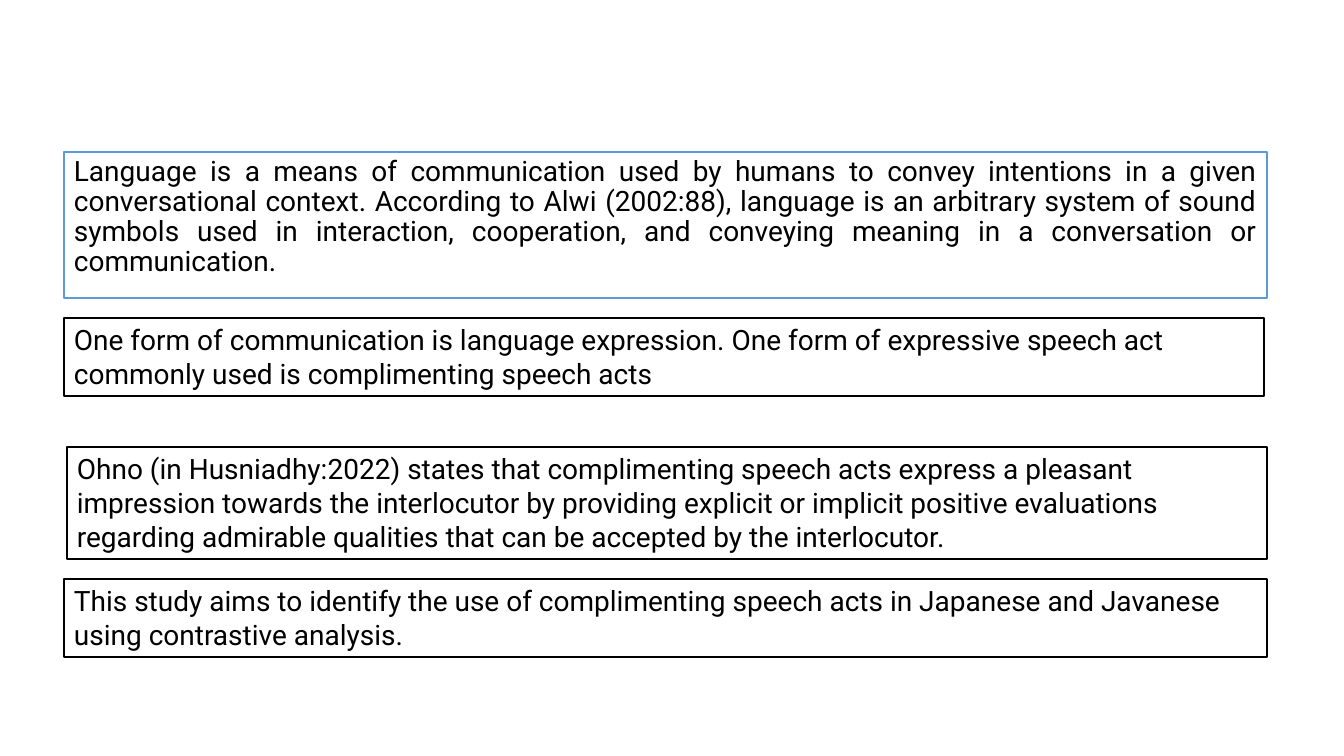
from dataclasses import dataclass

from pptx import Presentation
from pptx.dml.color import RGBColor
from pptx.enum.shapes import MSO_SHAPE
from pptx.enum.text import MSO_ANCHOR, PP_ALIGN
from pptx.util import Pt

RECTANGLE = MSO_SHAPE.RECTANGLE
TOP = MSO_ANCHOR.TOP
LEFT, JUSTIFY = PP_ALIGN.LEFT, PP_ALIGN.JUSTIFY
EMU_PER_PX = 914400 / 100.8


@dataclass(frozen=True)
class Theme:
    paper: RGBColor = RGBColor(0xFF, 0xFF, 0xFF)
    ink: RGBColor = RGBColor(0x00, 0x00, 0x00)
    accent: RGBColor = RGBColor(0x5B, 0x9B, 0xD5)
    font: str = "Roboto"
    body_size: int = 20
    border_width: int = 1


THEME = Theme()


def px(length):
    return round(length * EMU_PER_PX)


def add_statement(text, *, left, top, width, height,
                  border=THEME.ink, align=LEFT, line_spacing=1.0):
    """Add a bordered box that holds one paragraph."""
    box = slide.shapes.add_shape(RECTANGLE, px(left), px(top), px(width), px(height))
    box.shadow.inherit = False
    box.fill.solid()
    box.fill.fore_color.rgb = THEME.paper
    box.line.color.rgb = border
    box.line.width = Pt(THEME.border_width)
    frame = box.text_frame
    frame.word_wrap = True
    frame.vertical_anchor = TOP
    paragraph = frame.paragraphs[0]
    paragraph.alignment = align
    paragraph.line_spacing = line_spacing
    run = paragraph.add_run()
    run.text = text
    run.font.name = THEME.font
    run.font.size = Pt(THEME.body_size)
    run.font.color.rgb = THEME.ink


presentation = Presentation()
presentation.slide_width = px(1344)
presentation.slide_height = px(756)
slide = presentation.slides.add_slide(presentation.slide_layouts[6])

add_statement(
    "Language is a means of communication used by humans to convey intentions "
    "in a given conversational context. According to Alwi (2002:88), language is "
    "an arbitrary system of sound symbols used in interaction, cooperation, and "
    "conveying meaning in a conversation or communication.",
    left=64, top=152, width=1203, height=146,
    border=THEME.accent, align=JUSTIFY, line_spacing=0.9)

add_statement(
    "One form of communication is language expression. One form of expressive "
    "speech act commonly used is complimenting speech acts",
    left=64, top=318, width=1200, height=78)

add_statement(
    "Ohno (in Husniadhy:2022) states that complimenting speech acts express a "
    "pleasant impression towards the interlocutor by providing explicit or "
    "implicit positive evaluations regarding admirable qualities that can be "
    "accepted by the interlocutor.",
    left=67, top=447, width=1200, height=112)

add_statement(
    "This study aims to identify the use of complimenting speech acts in "
    "Japanese and Javanese using contrastive analysis.",
    left=64, top=579, width=1203, height=78)

presentation.save("out.pptx")
